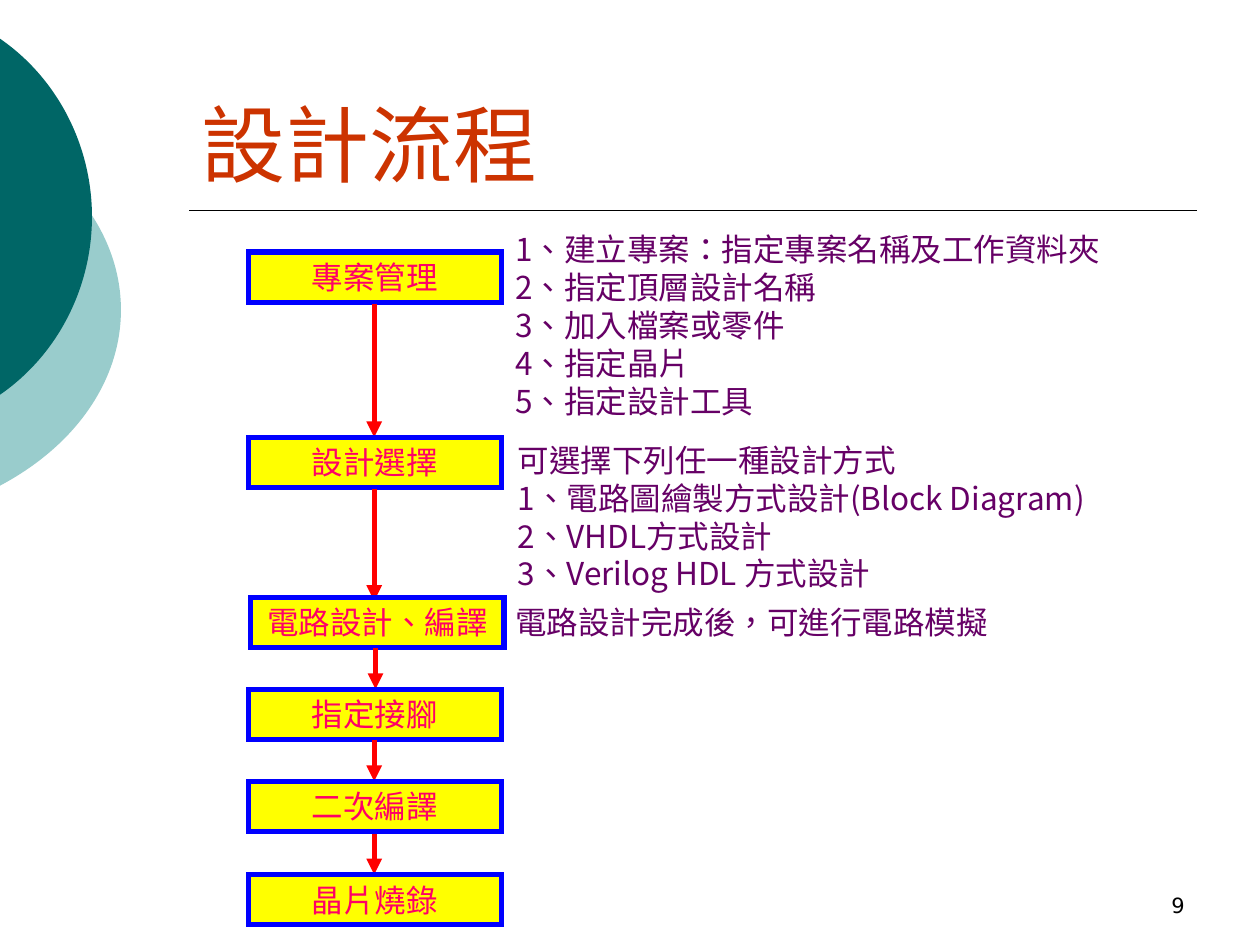
from lxml import etree
from pptx import Presentation
from pptx.dml.color import RGBColor
from pptx.enum import lang, shapes, text
from pptx.oxml import ns
from pptx.util import Inches, Pt

TITLE = "設計流程"
PAGE_NUMBER = "9"
STEPS = [
    ("專案管理", 1.97, 2.0),
    ("設計選擇", 1.97, 3.47),
    ("電路設計、編譯", 1.99, 4.74),
    ("指定接腳", 1.97, 5.47),
    ("二次編譯", 1.97, 6.2),
    ("晶片燒錄", 1.97, 6.94),
]
ARROWS = [
    (2.97, 2.41, 3.47),
    (2.97, 3.88, 4.77),
    (2.98, 5.14, 5.47),
    (2.97, 5.87, 6.2),
    (2.97, 6.62, 6.94),
]
NOTES = [
    (3.99, 1.78, 1.62, [
        "1、建立專案：指定專案名稱及工作資料夾",
        "2、指定頂層設計名稱\v3、加入檔案或零件",
        "4、指定晶片",
        "5、指定設計工具",
    ]),
    (4.01, 3.45, 1.31, [
        "可選擇下列任一種設計方式",
        "1、電路圖繪製方式設計(Block Diagram)",
        "2、VHDL方式設計",
        "3、Verilog HDL 方式設計",
    ]),
    (3.99, 4.74, 0.4, ["電路設計完成後，可進行電路模擬"]),
]
ARCS = [
    ("light_arc", (-3.54, 0.75, 4.5, 3.42),
     [(-0.01, 1.06), (0.6, 1.38), (0.96, 1.9), (0.96, 2.46)]),
    ("dark_arc", (-2.65, 0, 3.38, 3.45),
     [(-0.01, 0.3), (0.46, 0.62), (0.73, 1.16), (0.73, 1.72)]),
]
THEME = {
    "light_arc": "99CCCC",
    "dark_arc": "006666",
    "rule": "000000",
    "box_fill": "FFFF00",
    "box_line": "0000FF",
    "arrow": "FF0000",
    "east_asian": "Noto Sans CJK JP",
    "title": ("Arial", 48, "CC3300"),
    "step": ("DejaVu Sans", 18, "FF0066"),
    "note": ("Noto Sans CJK JP", 18, "660066"),
    "page": ("DejaVu Sans", 12, "000000"),
}
BOX_WIDTH, BOX_HEIGHT = 2.01, 0.4
NOTE_WIDTH = 5.32


def color(name):
    return RGBColor.from_string(THEME[name])


def add_child(parent, tag, **attributes):
    return etree.SubElement(parent, ns.qn(tag), attributes)


def write(shape, lines, style, align, anchor, grow):
    font_name, size, font_color = THEME[style]
    frame = shape.text_frame
    frame.word_wrap = True
    frame.vertical_anchor = anchor
    if grow:
        frame.auto_size = text.MSO_AUTO_SIZE.SHAPE_TO_FIT_TEXT
    frame.text = "\n".join(lines)
    for paragraph in frame.paragraphs:
        paragraph.alignment = align
        for run in paragraph.runs:
            run.font.name = font_name
            run.font.size = Pt(size)
            run.font.color.rgb = RGBColor.from_string(font_color)
            run.font.language_id = lang.MSO_LANGUAGE_ID.TRADITIONAL_CHINESE
            add_child(run.font._element, "a:ea", typeface=THEME["east_asian"])


def add_text(slide, bounds, lines, style, align=text.PP_ALIGN.LEFT,
             anchor=text.MSO_ANCHOR.BOTTOM, grow=False):
    shape = slide.shapes.add_textbox(*map(Inches, bounds))
    write(shape, lines, style, align, anchor, grow)


def add_line(slide, start, end, line_color, width, arrow=False):
    connector = slide.shapes.add_connector(
        shapes.MSO_CONNECTOR.STRAIGHT, *map(Inches, start + end))
    connector.line.color.rgb = color(line_color)
    connector.line.width = Pt(width)
    if arrow:
        add_child(connector.line._get_or_add_ln(), "a:tailEnd", type="triangle")
    add_child(connector._element.spPr, "a:effectLst")


def add_arc(slide, fill, bounds, upper):
    left, top, width, height = bounds
    right, bottom = left + width, top + height
    corners = [(right, top), (right, bottom), (left, bottom)]
    builder = slide.shapes.build_freeform(Inches(left), Inches(top))
    builder.add_line_segments([(Inches(x), Inches(y)) for x, y in corners])
    shape = builder.convert_to_shape()
    shape.shadow.inherit = False
    shape.fill.solid()
    shape.fill.fore_color.rgb = color(fill)
    shape.line.fill.background()

    middle = upper[-1][1]
    lower = [(x, 2 * middle - y) for x, y in reversed(upper[:-1])]
    outline = next(shape._element.iter(ns.qn("a:path")))
    for segment in list(outline):
        outline.remove(segment)
    for tag, points in (("a:moveTo", upper[:1]), ("a:cubicBezTo", upper[1:]),
                        ("a:cubicBezTo", lower)):
        segment = add_child(outline, tag)
        for x, y in points:
            add_child(segment, "a:pt", x=str(Inches(x - left)), y=str(Inches(y - top)))
    add_child(outline, "a:close")


def add_step(slide, label, left, top):
    shape = slide.shapes.add_shape(
        shapes.MSO_SHAPE.RECTANGLE,
        *map(Inches, (left, top, BOX_WIDTH, BOX_HEIGHT)))
    shape.shadow.inherit = False
    shape.fill.solid()
    shape.fill.fore_color.rgb = color("box_fill")
    shape.line.color.rgb = color("box_line")
    shape.line.width = Pt(3)
    add_child(shape.line._get_or_add_ln(), "a:miter", lim="800000")
    write(shape, [label], "step", text.PP_ALIGN.CENTER, text.MSO_ANCHOR.TOP, True)


def main():
    presentation = Presentation()
    presentation.slide_width, presentation.slide_height = Inches(10), Inches(7.5)
    slide = presentation.slides.add_slide(presentation.slide_layouts[6])

    for arc in ARCS:
        add_arc(slide, *arc)
    add_line(slide, (1.5, 1.67), (9.5, 1.67), "rule", 1)
    add_text(slide, (7.17, 6.83, 2.33, 0.5), [PAGE_NUMBER], "page",
             text.PP_ALIGN.RIGHT)
    add_text(slide, (1.5, 0.33, 8, 1.25), [TITLE], "title")

    add_step(slide, *STEPS[0])
    for (x, start, end), step in zip(ARROWS, STEPS[1:]):
        add_line(slide, (x, start), (x, end), "arrow", 3, arrow=True)
        add_step(slide, *step)
    for left, top, height, lines in NOTES:
        add_text(slide, (left, top, NOTE_WIDTH, height), lines, "note",
                 anchor=text.MSO_ANCHOR.TOP, grow=True)

    presentation.save("out.pptx")


if __name__ == "__main__":
    main()
